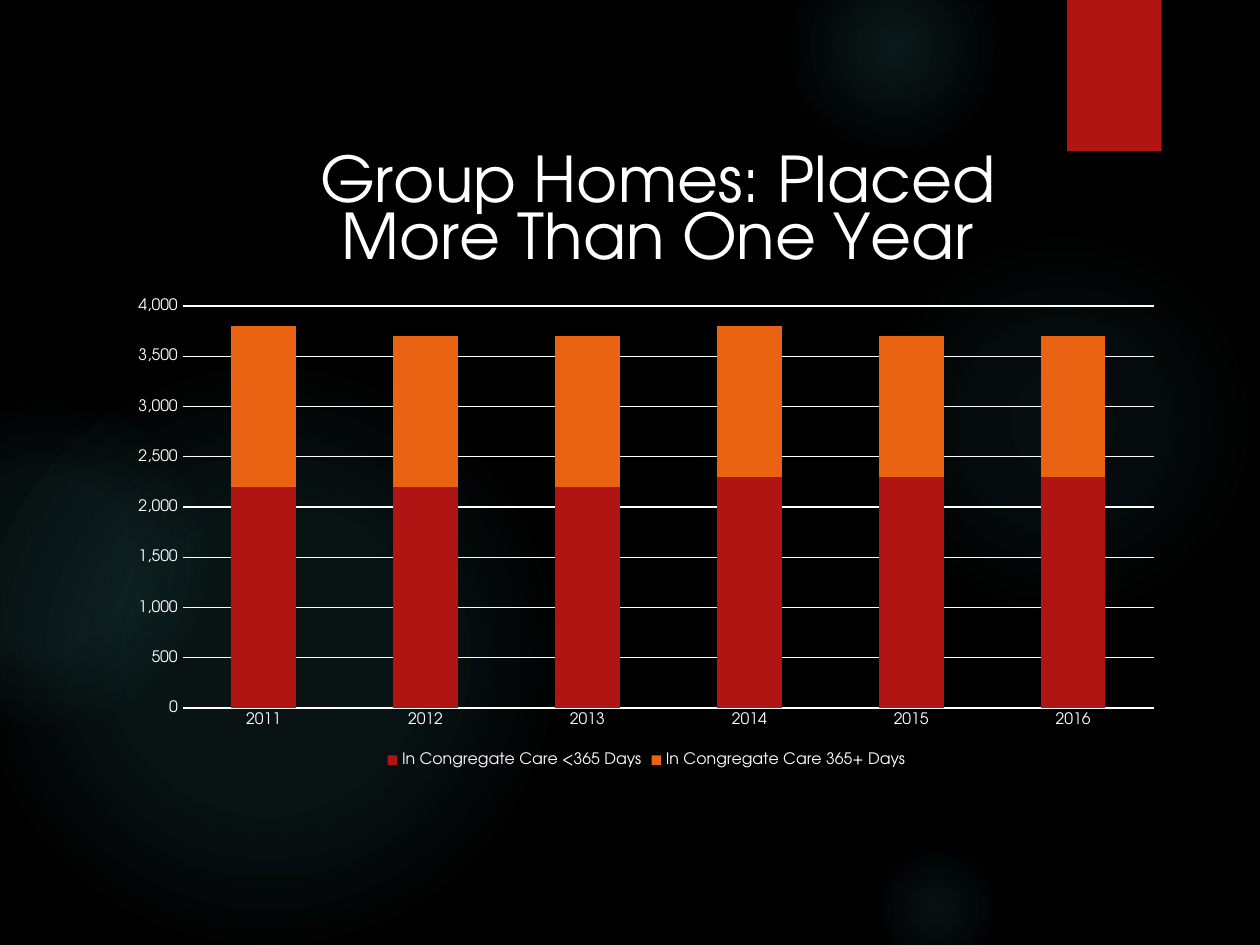
from pptx import Presentation
from pptx.chart.data import CategoryChartData
from pptx.dml.color import RGBColor
from pptx.enum.chart import XL_CHART_TYPE, XL_LEGEND_POSITION, XL_TICK_MARK
from pptx.enum.shapes import MSO_SHAPE
from pptx.oxml import parse_xml
from pptx.oxml.ns import nsdecls, qn
from pptx.util import Inches, Pt

STACKED = XL_CHART_TYPE.COLUMN_STACKED
BOTTOM = XL_LEGEND_POSITION.BOTTOM
NO_TICK = XL_TICK_MARK.NONE
OVAL, RECTANGLE = MSO_SHAPE.OVAL, MSO_SHAPE.RECTANGLE

FONT = "TeX Gyre Adventor"
COLORS = {"back": "000000", "glow": "50B9C1", "text": "FFFFFF",
          "red": "B01513", "orange": "EA6312"}


def color(name):
    return RGBColor.from_string(COLORS[name])


def set_font(font, size):
    formats = {"name": FONT, "size": Pt(size), "bold": False}
    for key, value in formats.items():
        setattr(font, key, value)
    font.color.rgb = color("text")


deck = Presentation()
deck.slide_width, deck.slide_height = Inches(10), Inches(7.5)
page = deck.slides.add_slide(deck.slide_layouts[6])
page.background.fill.solid()
page.background.fill.fore_color.rgb = color("back")

# Soft glows: left, top, diameter, then (position %, opacity %) stops
glows = [
    (6.89, 1.83, 3.08, [(0, 7), (36, 6), (69, 0)]),
    (6.22, -0.5, 1.75, [(0, 14), (36, 7), (73, 0)]),
    (6.89, 6.67, 1.08, [(0, 9), (36, 5), (66, 0)]),
    (-0.17, 2.92, 4.58, [(0, 11), (36, 10), (75, 0)]),
    (-0.92, 3.17, 2.58, [(0, 8), (36, 8), (72, 0)]),
]
for left, top, diameter, stops in glows:
    glow = page.shapes.add_shape(OVAL, Inches(left), Inches(top),
                                 Inches(diameter), Inches(diameter))
    glow.shadow.inherit = False
    glow.line.fill.background()
    glow.fill.background()
    stop_xml = "".join(
        f'<a:gs pos="{position * 1000}"><a:srgbClr val="{COLORS["glow"]}">'
        f'<a:alpha val="{opacity * 1000}"/></a:srgbClr></a:gs>'
        for position, opacity in stops)
    gradient = parse_xml(
        f'<a:gradFill {nsdecls("a")} rotWithShape="1"><a:gsLst>{stop_xml}</a:gsLst>'
        '<a:path path="circle"><a:fillToRect l="50000" t="50000" r="50000" b="50000"/>'
        '</a:path></a:gradFill>')
    properties = glow.element.spPr
    properties.replace(properties.find(qn("a:noFill")), gradient)

# Red tab with a soft shadow below
tab = page.shapes.add_shape(RECTANGLE, Inches(8.47), Inches(0), Inches(0.75), Inches(1.2))
tab.shadow.inherit = False
tab.fill.solid()
tab.fill.fore_color.rgb = color("red")
tab.line.fill.background()
tab.element.spPr.find(qn("a:effectLst")).append(parse_xml(
    f'<a:outerShdw {nsdecls("a")} blurRad="{Pt(3)}" dist="{Pt(2)}" dir="5400000" '
    f'rotWithShape="0"><a:srgbClr val="{COLORS["back"]}"><a:alpha val="45000"/>'
    '</a:srgbClr></a:outerShdw>'))

# Stacked column chart
data = CategoryChartData(number_format="#,##0")
data.categories = ["2011", "2012", "2013", "2014", "2015", "2016"]
data.add_series("In Congregate Care <365 Days", [2200, 2200, 2200, 2300, 2300, 2300])
data.add_series("In Congregate Care 365+ Days", [1600, 1500, 1500, 1500, 1400, 1400])
frame = page.shapes.add_chart(STACKED, Inches(0.93), Inches(1.09),
                              Inches(8.4), Inches(5.04), data)
chart = frame.chart
set_font(chart.font, 10)

chart.has_title = True
title = chart.chart_title
title.include_in_layout = False
para = title.text_frame.paragraphs[0]
span = para.add_run()
span.text = "Group Homes: Placed More Than One Year"
set_font(span.font, 36)

chart.has_legend = True
chart.legend.position = BOTTOM
chart.legend.include_in_layout = False
set_font(chart.legend.font, 9)

plot = chart.plots[0]
plot.gap_width, plot.overlap, plot.vary_by_categories = 150, 100, False
for series, name in zip(plot.series, ["red", "orange"]):
    series.format.fill.solid()
    series.format.fill.fore_color.rgb = color(name)

years, counts = chart.category_axis, chart.value_axis
for axis in (years, counts):
    axis.major_tick_mark = axis.minor_tick_mark = NO_TICK
    set_font(axis.tick_labels.font, 9)
counts.minimum_scale, counts.maximum_scale, counts.major_unit = 0, 4000, 500
counts.tick_labels.number_format = "#,##0"
counts.tick_labels.number_format_is_linked = False
counts.format.line.fill.background()
counts.has_major_gridlines = True
for line in (years.format.line, counts.major_gridlines.format.line):
    line.color.rgb = color("text")
    line.width = Pt(0.75)

# Title and inner plot area, placed in inches from the chart's corner
area = chart.element.find(qn("c:chart")).find(qn("c:plotArea"))
heading = title._element
places = [
    (heading, 1, "", {"x": 1.52, "y": 0}),
    (area, 0, '<c:layoutTarget val="inner"/>',
     {"x": 0.52, "y": 1.34, "w": 7.71, "h": 3.19}),
]
extents = {"x": frame.width, "y": frame.height, "w": frame.width, "h": frame.height}
for part, index, target, lengths in places:
    for layout in part.findall(qn("c:layout")):
        part.remove(layout)
    share_xml = "".join(f'<c:{key} val="{Inches(length) / extents[key]}"/>'
                        for key, length in lengths.items())
    part.insert(index, parse_xml(
        f'<c:layout {nsdecls("c")}><c:manualLayout>{target}'
        f'<c:xMode val="edge"/><c:yMode val="edge"/>{share_xml}'
        '</c:manualLayout></c:layout>'))

deck.save("out.pptx")
